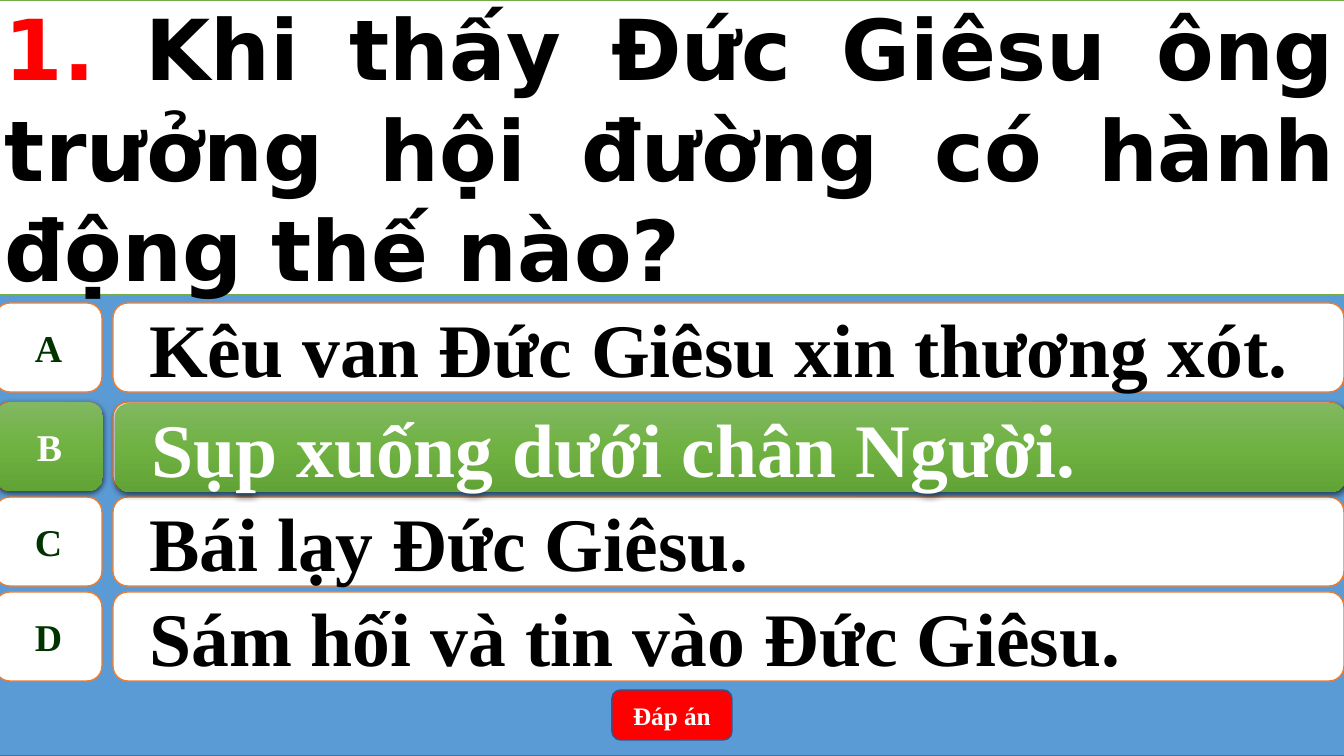
from lxml.etree import SubElement as Sub
from pptx import Presentation
from pptx.dml.color import RGBColor as RGB
from pptx.enum.shapes import MSO_SHAPE as Kind
from pptx.enum.text import MSO_ANCHOR as Anchor, PP_ALIGN as Align
from pptx.oxml.ns import qn
from pptx.util import Pt

SCALE = 914400 / 100.8
WHITE = RGB(0xFF, 0xFF, 0xFF)
BLACK = RGB(0, 0, 0)
RED = RGB(0xFF, 0, 0)
SKY = RGB(0x5B, 0x9B, 0xD5)
STEEL = RGB(0x43, 0x73, 0x9E)
NAVY = RGB(0x32, 0x54, 0x91)
AMBER = RGB(0xED, 0x7D, 0x31)
GREEN = RGB(0x70, 0xAD, 0x47)
PINE = RGB(0, 0x33, 0)
SHADE = [(0, RGB(0x81, 0xB8, 0x61)), (50, RGB(0x6F, 0xB2, 0x42)), (100, RGB(0x62, 0xA3, 0x36))]
SERIF = "Times New Roman"
SANS = "DejaVu Sans"


def px(num):
    return round(num * SCALE)


class Quiz:
    def __init__(self, wide, high):
        self.deck = Presentation()
        self.deck.slide_width, self.deck.slide_height = px(wide), px(high)
        self.slide = self.deck.slides.add_slide(self.deck.slide_layouts[6])

    def box(self, kind, area, fill=None, line=None, home=None):
        shapes = (home or self.slide).shapes
        shape = shapes.add_shape(kind, *map(px, area))
        shape.shadow.inherit = False
        if fill is None:
            self.glow(shape)
        else:
            shape.fill.solid()
            shape.fill.fore_color.rgb = fill
        if line is None:
            shape.line.fill.background()
        else:
            shape.line.color.rgb = line
            shape.line.width = Pt(1)
        return shape

    def glow(self, shape):
        shape.fill.gradient()
        shape.fill.gradient_angle = 270
        props = shape._element.spPr
        stops = props.find(".//" + qn("a:gsLst"))
        for stop in list(stops):
            stops.remove(stop)
        for place, tone in SHADE:
            stop = Sub(stops, qn("a:gs"), pos=str(place * 1000))
            Sub(stop, qn("a:srgbClr"), val=str(tone))
        cast = Sub(props.find(qn("a:effectLst")), qn("a:outerShdw"), blurRad=str(Pt(4.5)),
                   dist=str(Pt(1.5)), dir="5400000", algn="ctr", rotWithShape="0")
        tone = Sub(cast, qn("a:srgbClr"), val=str(BLACK))
        Sub(tone, qn("a:alpha"), val="63000")

    def text(self, shape, runs, size, name=SERIF, align=Align.CENTER, wrap=True):
        frame = shape.text_frame
        frame.word_wrap = wrap
        frame.vertical_anchor = Anchor.MIDDLE
        para = frame.paragraphs[0]
        para.alignment = align
        form = {"size": Pt(size), "name": name, "bold": True}
        for words, tone in runs:
            run = para.add_run()
            run.text = words
            for key, value in form.items():
                setattr(run.font, key, value)
            run.font.color.rgb = tone
        return para

    def choice(self, top, mark, words, chosen=False):
        group = self.slide.shapes.add_group_shape()
        fill, line = (None, None) if chosen else (WHITE, AMBER)
        left, start = (-4, 115) if chosen else (-5, 113)
        badge = self.box(Kind.FLOWCHART_ALTERNATE_PROCESS, (left, top, 107, 89), fill, line, group)
        self.text(badge, [(mark, WHITE if chosen else PINE)], 27, wrap=False)
        bar = self.box(Kind.ROUNDED_RECTANGLE, (start, top + chosen, 1231, 89), fill, line, group)
        para = self.text(bar, [(words, WHITE if chosen else BLACK)], 54, align=Align.LEFT)
        para.level = 1
        props = para._p.get_or_add_pPr()
        props.set("marL", str(px(50)))
        props.set("indent", str(px(-28)))


def main():
    quiz = Quiz(1344, 756)
    quiz.box(Kind.RECTANGLE, (-5, 0, 1350, 756), SKY, STEEL)
    rows = [
        (303, "A", "Kêu van Đức Giêsu xin thương xót."),
        (402, "B", "Sụp xuống dưới chân Người."),
        (497, "C", "Bái lạy Đức Giêsu."),
        (592, "D", "Sám hối và tin vào Đức Giêsu."),
    ]
    for row in rows:
        quiz.choice(*row)
    quiz.choice(*rows[1], chosen=True)
    button = quiz.box(Kind.ROUNDED_RECTANGLE, (612, 690, 120, 50), RED, NAVY)
    quiz.text(button, [("Đáp án", WHITE)], 18)
    title = quiz.box(Kind.RECTANGLE, (-5, 0, 1350, 295), WHITE, GREEN)
    ask = "Khi thấy Đức Giêsu ông trưởng hội đường có hành động thế nào?"
    quiz.text(title, [("1. ", RED), (ask, BLACK)], 60, SANS, Align.JUSTIFY)
    quiz.deck.save("out.pptx")


if __name__ == "__main__":
    main()
